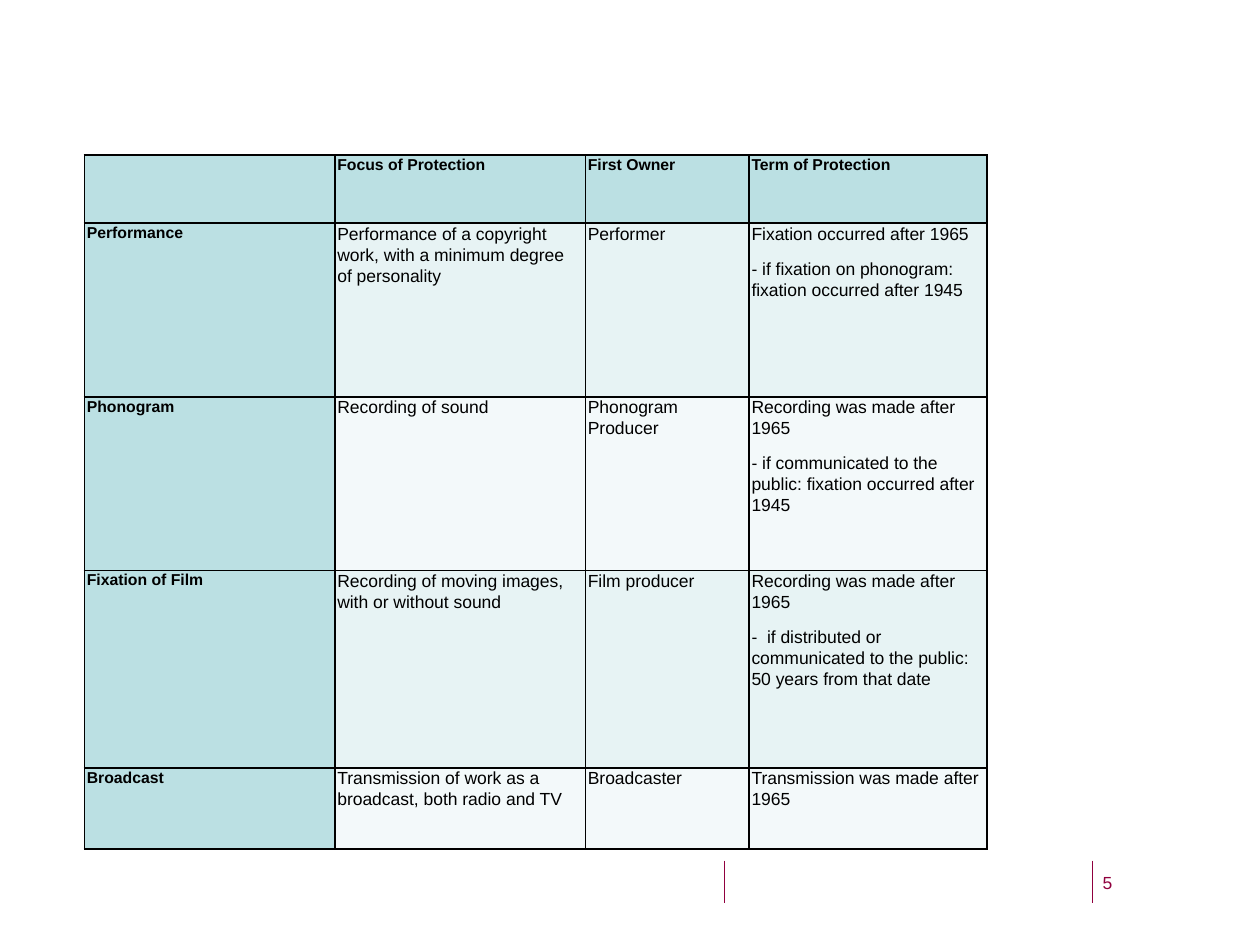
import pptx
import pptx.dml.color
import pptx.enum.shapes
import pptx.oxml
import pptx.oxml.ns
import pptx.util
from pptx.util import Cm

HEADS = ["", "Focus of Protection", "First Owner", "Term of Protection"]
RIGHTS = [
    ["Performance",
     "Performance of a copyright work, with a minimum degree of personality",
     "Performer",
     "Fixation occurred after 1965\n"
     "- if fixation on phonogram: fixation occurred after 1945"],
    ["Phonogram", "Recording of sound", "Phonogram Producer",
     "Recording was made after 1965\n"
     "- if communicated to the public: fixation occurred after 1945"],
    ["Fixation of Film",
     "Recording of moving images, with or without sound",
     "Film producer",
     "Recording was made after 1965\n"
     "-  if distributed or communicated to the public: 50 years from that date"],
    ["Broadcast",
     "Transmission of work as a broadcast, both radio and TV",
     "Broadcaster", "Transmission was made after 1965"],
]
WIDTHS = [5.05, 5.05, 3.3, 4.8]
HEIGHTS = [1.38, 3.5, 3.5, 3.98, 1.64]


def rgb(code):
    return pptx.dml.color.RGBColor.from_string(code)


def put(thing, values):
    for name, value in values.items():
        setattr(thing, name, value)


class Page:
    font = "Arial"
    ink = "000000"
    accent = "90003E"
    head = "BBE0E3"
    bands = ["F3F9FA", "E7F3F4"]

    def __init__(self, slide):
        self.slide = slide

    def style(self, para, size, color, bold=False):
        put(para.font, {"name": self.font, "size": pptx.util.Pt(size),
                        "bold": bold})
        para.font.color.rgb = rgb(color)

    def rule(self, x, top, end):
        """Draw an upright line in the footer."""
        line = self.slide.shapes.add_connector(
            pptx.enum.shapes.MSO_CONNECTOR.STRAIGHT,
            Cm(x), Cm(top), Cm(x), Cm(end))
        line.line.color.rgb = rgb(self.accent)
        line.line.width = pptx.util.Pt(0.75)
        props = line._element.spPr
        props.append(pptx.oxml.parse_xml(
            f"<a:effectLst {pptx.oxml.ns.nsdecls('a')}/>"))

    def text(self, words, x, y, width, height):
        box = self.slide.shapes.add_textbox(
            Cm(x), Cm(y), Cm(width), Cm(height))
        frame = box.text_frame
        put(frame, {"word_wrap": True, "margin_left": 0, "margin_right": 0,
                    "margin_top": 0, "margin_bottom": 0})
        frame.text = words
        self.style(frame.paragraphs[0], 10, self.accent)

    def edge(self, cell):
        """Add a border on all four sides of a cell."""
        props = cell._tc.get_or_add_tcPr()
        for side in "LRTB":
            props.append(pptx.oxml.parse_xml(
                f'<a:ln{side} {pptx.oxml.ns.nsdecls("a")} w="12700">'
                f'<a:solidFill><a:srgbClr val="{self.ink}"/></a:solidFill>'
                f'</a:ln{side}>'))

    def cell(self, cell, words, fill, bold):
        put(cell, {"margin_left": Cm(0.05), "margin_right": Cm(0.05),
                   "margin_top": 0, "margin_bottom": 0})
        self.edge(cell)
        cell.fill.solid()
        cell.fill.fore_color.rgb = rgb(fill)
        cell.text = words
        for para in cell.text_frame.paragraphs:
            put(para, {"line_spacing": 1.07,
                       "space_after": pptx.util.Pt(8)})
            self.style(para, 9 if bold else 10, self.ink, bold)

    def table(self, rows, x, y, widths, heights):
        table = self.slide.shapes.add_table(
            len(rows), len(widths), Cm(x), Cm(y),
            Cm(sum(widths)), Cm(sum(heights))).table
        put(table, {"first_row": False, "horz_banding": False})
        for col, width in zip(table.columns, widths):
            col.width = Cm(width)
        for row, height in zip(table.rows, heights):
            row.height = Cm(height)
        for r, row in enumerate(rows):
            for c, words in enumerate(row):
                bold = r == 0 or c == 0
                fill = self.head if bold else self.bands[r % 2]
                self.cell(table.cell(r, c), words, fill, bold)


def main():
    deck = pptx.Presentation()
    put(deck, {"slide_width": Cm(25.4), "slide_height": Cm(19.05)})
    page = Page(deck.slides.add_slide(deck.slide_layouts[6]))
    for x in (22.02, 14.6):
        page.rule(x, 17.35, 18.2)
    page.text("5", 22.23, 17.58, 1.47, 1.09)
    page.table([HEADS] + RIGHTS, 1.7, 3.12, WIDTHS, HEIGHTS)
    deck.save("out.pptx")


if __name__ == "__main__":
    main()
